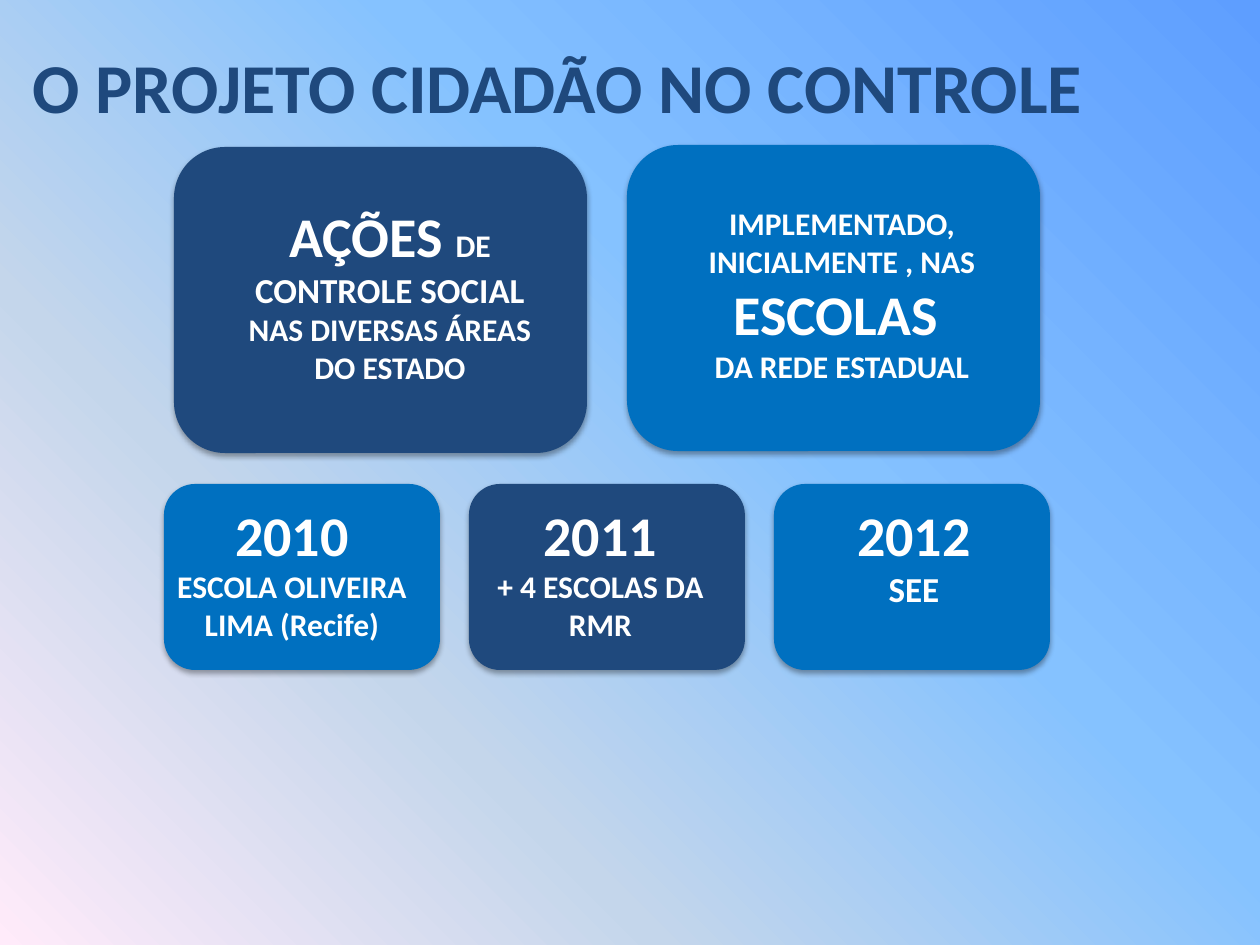
"""Builds the slide on the Cidadão no Controle project and its yearly stages."""
from lxml import etree
from pptx import Presentation
from pptx.dml.color import RGBColor
from pptx.enum.shapes import MSO_SHAPE
from pptx.enum.text import MSO_ANCHOR, PP_ALIGN
from pptx.oxml.ns import qn
from pptx.util import Emu, Pt

ROUNDED = MSO_SHAPE.ROUNDED_RECTANGLE
TOP = MSO_ANCHOR.TOP
LEFT, CENTER = PP_ALIGN.LEFT, PP_ALIGN.CENTER
NAVY = RGBColor(0x1F, 0x49, 0x7D)
BLUE = RGBColor(0x00, 0x70, 0xC0)
WHITE = RGBColor(0xFF, 0xFF, 0xFF)
BACKDROP = [
    (0, RGBColor(0x5E, 0x9E, 0xFF)),
    (40, RGBColor(0x85, 0xC2, 0xFF)),
    (70, RGBColor(0xC4, 0xD6, 0xEB)),
    (100, RGBColor(0xFF, 0xEB, 0xFA)),
]
FONT = "Calibri"
PX_PER_INCH = 126

TITLE = "O PROJETO CIDADÃO NO CONTROLE"
TITLE_AREA = (20, 37, 1211, 97)
THEME_SIZE = (413, 306)
THEMES = [
    {"corner": (174, 147), "color": NAVY, "text_area": (232, 195, 316, 199),
     "paragraphs": [[("AÇÕES ", 32), ("DE ", 18), ("CONTROLE SOCIAL ", 20),
                     ("NAS DIVERSAS ÁREAS DO ESTADO", 18)]]},
    {"corner": (627, 145), "color": BLUE, "text_area": (684, 198, 316, 195),
     "paragraphs": [[("IMPLEMENTADO, INICIALMENTE , NAS ", 18), ("ESCOLAS ", 32)],
                    [("DA REDE ESTADUAL", 18)]]},
]
YEAR_SIZE = (276, 186)
YEAR_LEFT, YEAR_TOP, YEAR_STEP = 164, 484, 305
YEARS = [
    {"color": BLUE, "text_area": (134, 494, 316, 158),
     "paragraphs": [[("2010", 32)], [("ESCOLA OLIVEIRA LIMA (Recife)", 18)]]},
    {"color": NAVY, "text_area": (467, 494, 267, 158),
     "paragraphs": [[("2011", 32)], [("+ 4 ESCOLAS DA RMR", 18)]]},
    {"color": BLUE, "text_area": (784, 494, 260, 123),
     "paragraphs": [[("2012", 32)], [("SEE", 20)]]},
]


def px(length):
    return Emu(round(length * 914400 / PX_PER_INCH))


def style(span, size, color):
    span.font.name = FONT
    span.font.size = Pt(size)
    span.font.bold = True
    span.font.color.rgb = color


def paint_background(page):
    fill = page.background.fill
    fill.gradient()
    fill.gradient_angle = 225
    stops = page.element.find(".//" + qn("a:gsLst"))
    for stop in list(stops):
        stops.remove(stop)
    for percent, color in BACKDROP:
        stop = etree.SubElement(stops, qn("a:gs"), pos=str(percent * 1000))
        etree.SubElement(stop, qn("a:srgbClr"), val=str(color))


def add_title(page):
    title = page.shapes.title
    title.left, title.top, title.width, title.height = map(px, TITLE_AREA)
    title.text_frame.text = TITLE
    title.text_frame.vertical_anchor = TOP
    para = title.text_frame.paragraphs[0]
    para.alignment = LEFT
    style(para.runs[0], 40, NAVY)


def add_card(page, card, corner, size):
    shape = page.shapes.add_shape(ROUNDED, *map(px, corner + size))
    shape.fill.solid()
    shape.fill.fore_color.rgb = card["color"]
    shape.line.fill.background()


def add_caption(page, card):
    frame = page.shapes.add_textbox(*map(px, card["text_area"])).text_frame
    frame.word_wrap = True
    for index, pieces in enumerate(card["paragraphs"]):
        para = frame.add_paragraph() if index else frame.paragraphs[0]
        para.alignment = CENTER
        for text, size in pieces:
            span = para.add_run()
            span.text = text
            style(span, size, WHITE)


def main():
    deck = Presentation()
    deck.slide_width, deck.slide_height = px(1260), px(945)
    page = deck.slides.add_slide(deck.slide_layouts[5])
    paint_background(page)
    add_title(page)
    for theme in THEMES:
        add_card(page, theme, theme["corner"], THEME_SIZE)
        add_caption(page, theme)
    for index, year in enumerate(YEARS):
        add_card(page, year, (YEAR_LEFT + index * YEAR_STEP, YEAR_TOP), YEAR_SIZE)
        add_caption(page, year)
    deck.save("out.pptx")


if __name__ == "__main__":
    main()
